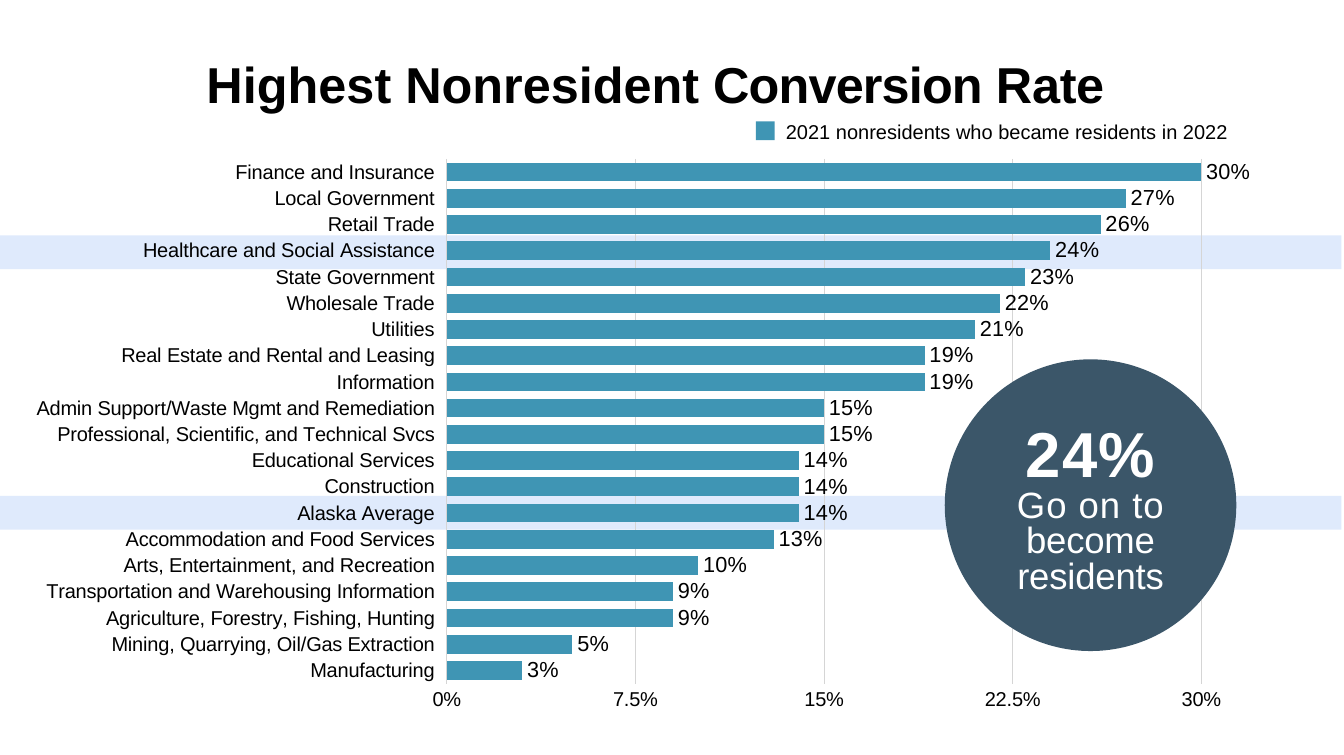
from dataclasses import dataclass

from pptx import Presentation
from pptx.chart.data import CategoryChartData
from pptx.dml.color import RGBColor
from pptx.enum.chart import XL_CHART_TYPE, XL_LABEL_POSITION, XL_TICK_MARK
from pptx.enum.shapes import MSO_SHAPE
from pptx.enum.text import MSO_ANCHOR, MSO_AUTO_SIZE, PP_ALIGN
from pptx.oxml import parse_xml
from pptx.oxml.ns import nsdecls, qn
from pptx.util import Inches, Pt

BAR_CLUSTERED = XL_CHART_TYPE.BAR_CLUSTERED
OUTSIDE_END = XL_LABEL_POSITION.OUTSIDE_END
TICK_NONE, TICK_OUTSIDE = XL_TICK_MARK.NONE, XL_TICK_MARK.OUTSIDE
RECTANGLE, OVAL = MSO_SHAPE.RECTANGLE, MSO_SHAPE.OVAL
TOP, MIDDLE = MSO_ANCHOR.TOP, MSO_ANCHOR.MIDDLE
LEFT, CENTER = PP_ALIGN.LEFT, PP_ALIGN.CENTER
NO_AUTOFIT = MSO_AUTO_SIZE.NONE
TITLE_ONLY = 5


@dataclass(frozen=True)
class Theme:
    font: str = "Arial"
    ink: str = "000000"
    light: str = "FFFFFF"
    bar: str = "3F95B4"
    band: str = "DFEAFC"
    grid: str = "D5D5D5"
    badge: str = "3B5669"
    title_size: float = 29
    label_size: float = 11.5
    value_size: float = 12.5
    figure_size: float = 36.5
    caption_size: float = 21


THEME = Theme()
SERIES = "2021 nonresidents who became residents in 2022"
RATES = [
    ("Finance and Insurance", 30),
    ("Local Government", 27),
    ("Retail Trade", 26),
    ("Healthcare and Social Assistance", 24),
    ("State Government", 23),
    ("Wholesale Trade", 22),
    ("Utilities", 21),
    ("Real Estate and Rental and Leasing", 19),
    ("Information", 19),
    ("Admin Support/Waste Mgmt and Remediation", 15),
    ("Professional, Scientific, and Technical Svcs", 15),
    ("Educational Services", 14),
    ("Construction", 14),
    ("Alaska Average", 14),
    ("Accommodation and Food Services", 13),
    ("Arts, Entertainment, and Recreation", 10),
    ("Transportation and Warehousing Information", 9),
    ("Agriculture, Forestry, Fishing, Hunting", 9),
    ("Mining, Quarrying, Oil/Gas Extraction", 5),
    ("Manufacturing", 3),
]
BAND_TOPS = (1.88, 3.96)
FRAME = (0, 1.1, 10.72, 4.8)
PLOT = (3.57, 1.27, 6.03, 4.19)


def color(value):
    return RGBColor.from_string(value)


def style_font(font, size, ink=THEME.ink, bold=False):
    font.name = THEME.font
    font.size = Pt(size)
    font.bold = bold
    font.color.rgb = color(ink)


def prepare_frame(frame, anchor, wrap):
    frame.margin_left = frame.margin_right = 0
    frame.margin_top = frame.margin_bottom = 0
    frame.auto_size = NO_AUTOFIT
    frame.vertical_anchor = anchor
    frame.word_wrap = wrap


def add_span(para, text, spacing=0):
    span = para.add_run()
    span.text = text
    if spacing:
        span._r.get_or_add_rPr().set("spc", str(round(spacing * 100)))


def add_block(page, kind, bounds, fill):
    block = page.shapes.add_shape(kind, *map(Inches, bounds))
    block.shadow.inherit = False
    block.fill.solid()
    block.fill.fore_color.rgb = color(fill)
    block.line.fill.background()
    return block


def set_title(page):
    title = page.shapes.title
    title.left, title.top = Inches(1.65), Inches(0.42)
    title.width, title.height = Inches(7.23), Inches(0.48)
    prepare_frame(title.text_frame, TOP, False)
    para = title.text_frame.paragraphs[0]
    para.alignment = LEFT
    para.line_spacing = 1.0
    style_font(para.font, THEME.title_size, bold=True)
    add_span(para, "Highest Nonresident")
    add_span(para, " Conversion ", -0.5)
    add_span(para, "Rate", -0.2)


def place_plot(chart):
    area = chart._chartSpace.chart.plotArea
    for layout in area.findall(qn("c:layout")):
        area.remove(layout)
    left, top, width, height = FRAME
    fractions = {
        "x": (PLOT[0] - left) / width,
        "y": (PLOT[1] - top) / height,
        "w": PLOT[2] / width,
        "h": PLOT[3] / height,
    }
    modes = "".join(f'<c:{axis}Mode val="edge"/>' for axis in "xy")
    sizes = "".join(f'<c:{key} val="{value:.4f}"/>' for key, value in fractions.items())
    area.insert(0, parse_xml(
        f'<c:layout {nsdecls("c")}><c:manualLayout><c:layoutTarget val="inner"/>'
        f"{modes}{sizes}</c:manualLayout></c:layout>"))


def clear_background(chart):
    clear = f'<c:spPr {nsdecls("c", "a")}><a:noFill/><a:ln><a:noFill/></a:ln></c:spPr>'
    space = chart._chartSpace
    space.chart.plotArea.append(parse_xml(clear))
    space.chart.addnext(parse_xml(clear))


def style_axes(chart):
    categories, values = chart.category_axis, chart.value_axis
    for axis, tick in ((categories, TICK_OUTSIDE), (values, TICK_NONE)):
        axis.major_tick_mark = tick
        axis.minor_tick_mark = TICK_NONE
        axis.format.line.fill.background()
        style_font(axis.tick_labels.font, THEME.label_size)
    categories.has_major_gridlines = False
    values.minimum_scale, values.maximum_scale = 0, 30
    values.major_unit = 7.5
    values.has_major_gridlines = True
    values.major_gridlines.format.line.color.rgb = color(THEME.grid)
    values.major_gridlines.format.line.width = Pt(0.25)
    values.tick_labels.number_format = '[=7.5]0.0"%";[=22.5]0.0"%";0"%"'
    values.tick_labels.number_format_is_linked = False


def add_rate_chart(page):
    data = CategoryChartData()
    names, rates = zip(*reversed(RATES))
    data.categories = names
    data.add_series(SERIES, rates)
    chart = page.shapes.add_chart(BAR_CLUSTERED, *map(Inches, FRAME), data).chart
    style_font(chart.font, THEME.label_size)
    chart.has_title = False
    chart.has_legend = False
    plot = chart.plots[0]
    plot.vary_by_categories = False
    plot.gap_width = 40
    fill = plot.series[0].format.fill
    fill.solid()
    fill.fore_color.rgb = color(THEME.bar)
    plot.has_data_labels = True
    labels = plot.data_labels
    labels.show_value = True
    labels.position = OUTSIDE_END
    labels.number_format = '0"%"'
    labels.number_format_is_linked = False
    style_font(labels.font, THEME.value_size)
    style_axes(chart)
    place_plot(chart)
    clear_background(chart)


def add_legend(page):
    add_block(page, RECTANGLE, (6.04, 0.97, 0.15, 0.15), THEME.bar)
    box = page.shapes.add_textbox(*map(Inches, (6.28, 0.94, 3.59, 0.22)))
    prepare_frame(box.text_frame, MIDDLE, True)
    para = box.text_frame.paragraphs[0]
    style_font(para.font, THEME.label_size)
    add_span(para, SERIES)


def add_badge(page):
    badge = add_block(page, OVAL, (7.55, 2.87, 2.33, 2.33), THEME.badge)
    frame = badge.text_frame
    prepare_frame(frame, MIDDLE, True)
    figure = frame.paragraphs[0]
    figure.alignment = CENTER
    style_font(figure.font, THEME.figure_size, THEME.light, True)
    add_span(figure, "24%", 0.7)
    for text, spacing in (("Go on to", 0.6), ("become", -0.1), ("residents", -0.1)):
        para = frame.add_paragraph()
        para.alignment = CENTER
        para.line_spacing = Pt(20.5)
        style_font(para.font, THEME.caption_size, THEME.light)
        add_span(para, text, spacing)


def main():
    deck = Presentation()
    deck.slide_width, deck.slide_height = Inches(10.74), Inches(6.03)
    page = deck.slides.add_slide(deck.slide_layouts[TITLE_ONLY])
    for top in BAND_TOPS:
        add_block(page, RECTANGLE, (0, top, 10.72, 0.27), THEME.band)
    set_title(page)
    add_rate_chart(page)
    add_legend(page)
    add_badge(page)
    deck.save("out.pptx")


if __name__ == "__main__":
    main()
